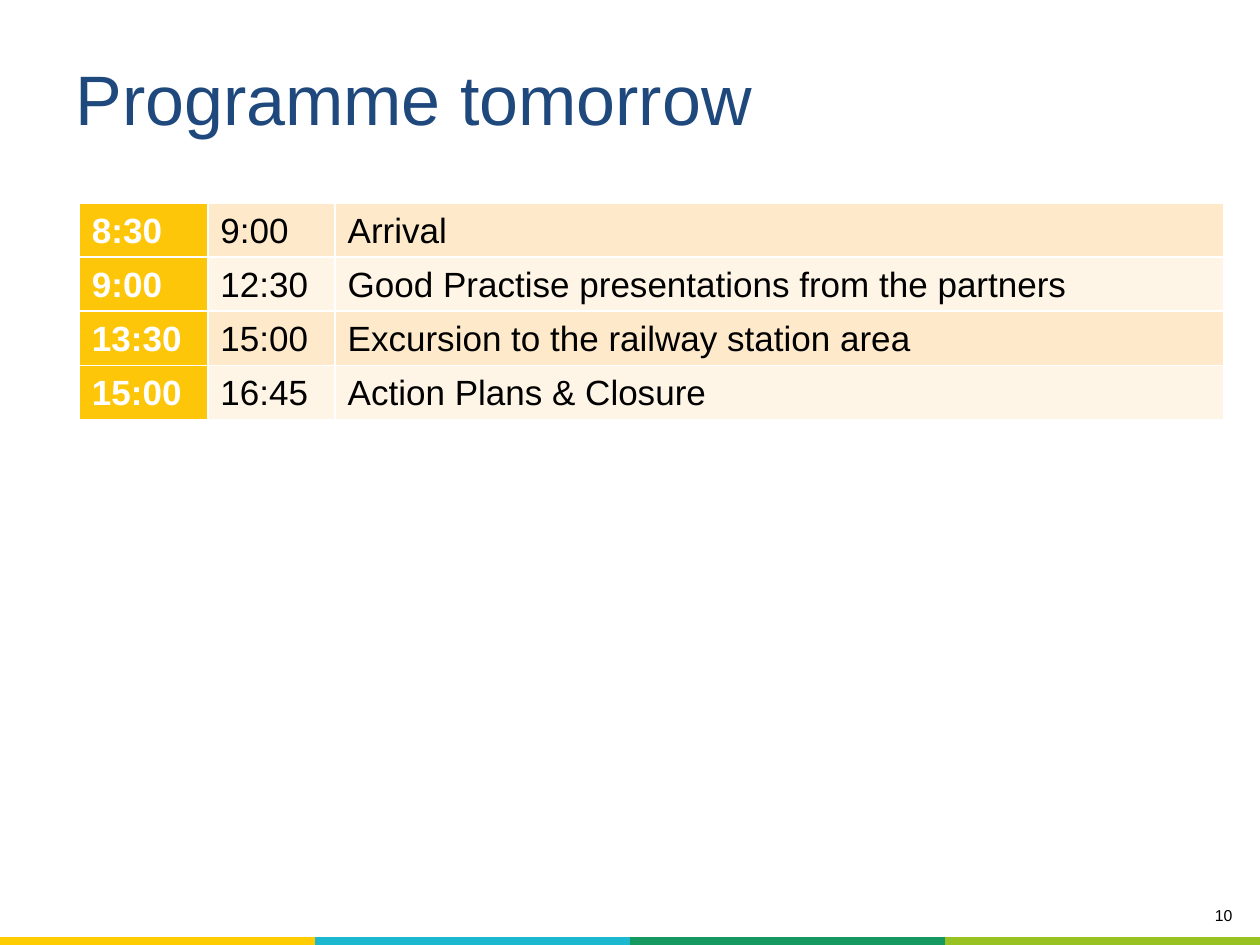
"""Build the slide that lists tomorrow's programme."""
from lxml import etree
from pptx import Presentation, util as u
from pptx.dml.color import RGBColor
from pptx.enum import text
from pptx.oxml import ns

WHITE = RGBColor(0xFF, 0xFF, 0xFF)
BLACK = RGBColor(0, 0, 0)
NAVY = RGBColor(0x1F, 0x49, 0x7D)
GOLD = RGBColor(0xFD, 0xC6, 0x09)
PEACH = RGBColor(0xFE, 0xEA, 0xCA)
CREAM = RGBColor(0xFF, 0xF5, 0xE6)
BANDS = [RGBColor(0xFF, 0xCC, 0x00), RGBColor(0x1C, 0xB8, 0xCF),
         RGBColor(0x15, 0x99, 0x61), RGBColor(0x98, 0xC2, 0x22)]
PLAIN = "{2D5ABB26-0587-4C30-8999-92F81FD0307C}"
ROWS = [("", "", ""),
        ("8:30", "9:00", "Arrival"),
        ("9:00", "12:30", "Good Practise presentations from the partners"),
        ("13:30", "15:00", "Excursion to the railway station area"),
        ("15:00", "16:45", "Action Plans & Closure")]
COLS = [1.02, 1.01, 7.05]
HIGH = 0.43


def style(para, **form):
    for key, val in {"name": "Arial", **form}.items():
        if key == "color":
            para.font.color.rgb = val
        else:
            setattr(para.font, key, val)


def grid(rows, cols, *box):
    table = slide.shapes.add_table(rows, cols, *map(u.Inches, box)).table
    table._tbl.tblPr.find(ns.qn("a:tableStyleId")).text = PLAIN
    table.first_row = table.horz_banding = False
    return table


prs = Presentation()
prs.slide_width, prs.slide_height = u.Inches(10), u.Inches(7.5)
slide = prs.slides.add_slide(prs.slide_layouts[5])

foot = grid(1, len(BANDS), 0, 7.44, 10, 0.17)
for cell, tint in zip(foot.iter_cells(), BANDS):
    cell.fill.solid()
    cell.fill.fore_color.rgb = tint

page = slide.shapes.add_textbox(*map(u.Inches, (7.91, 7.14, 1.97, 0.31))).text_frame
page.word_wrap = True
page.text = "10"
page.paragraphs[0].alignment = text.PP_ALIGN.RIGHT
style(page.paragraphs[0], size=u.Pt(9), color=BLACK)

title = slide.shapes.title
for key, val in dict(left=0.5, top=0.47, width=9, height=0.61).items():
    setattr(title, key, u.Inches(val))
head = title.text_frame
head.text = "Programme tomorrow"
head.auto_size = text.MSO_AUTO_SIZE.NONE
head.vertical_anchor = text.MSO_ANCHOR.MIDDLE
for side in ("left", "top", "right", "bottom"):
    setattr(head, "margin_" + side, u.Inches(0.1))
head.paragraphs[0].alignment = text.PP_ALIGN.LEFT
style(head.paragraphs[0], size=u.Pt(40), color=NAVY)

plan = grid(len(ROWS), len(COLS), 0.63, 1.18, sum(COLS), HIGH * len(ROWS))
for col, wide in zip(plan.columns, COLS):
    col.width = u.Inches(wide)
for r, row in enumerate(ROWS):
    plan.rows[r].height = u.Inches(HIGH)
    for c, word in enumerate(row):
        cell = plan.cell(r, c)
        cell.text = word
        cell.vertical_anchor = text.MSO_ANCHOR.MIDDLE
        cell.margin_left = cell.margin_right = u.Inches(0.1)
        cell.margin_top = cell.margin_bottom = 0
        para = cell.text_frame.paragraphs[0]
        para.line_spacing = 1.07
        style(para, size=u.Pt(20), bold=c == 0, color=BLACK if c else WHITE)
        cell.fill.solid()
        band = PEACH if r % 2 else CREAM
        cell.fill.fore_color.rgb = WHITE if r == 0 else band if c else GOLD
        props = cell._tc.get_or_add_tcPr()
        for i, edge in enumerate("LRTB"):
            line = etree.Element(ns.qn("a:ln" + edge), w=str(u.Pt(1)))
            fill = etree.SubElement(line, ns.qn("a:solidFill"))
            etree.SubElement(fill, ns.qn("a:srgbClr"), val=str(WHITE))
            props.insert(i, line)

prs.save("out.pptx")
